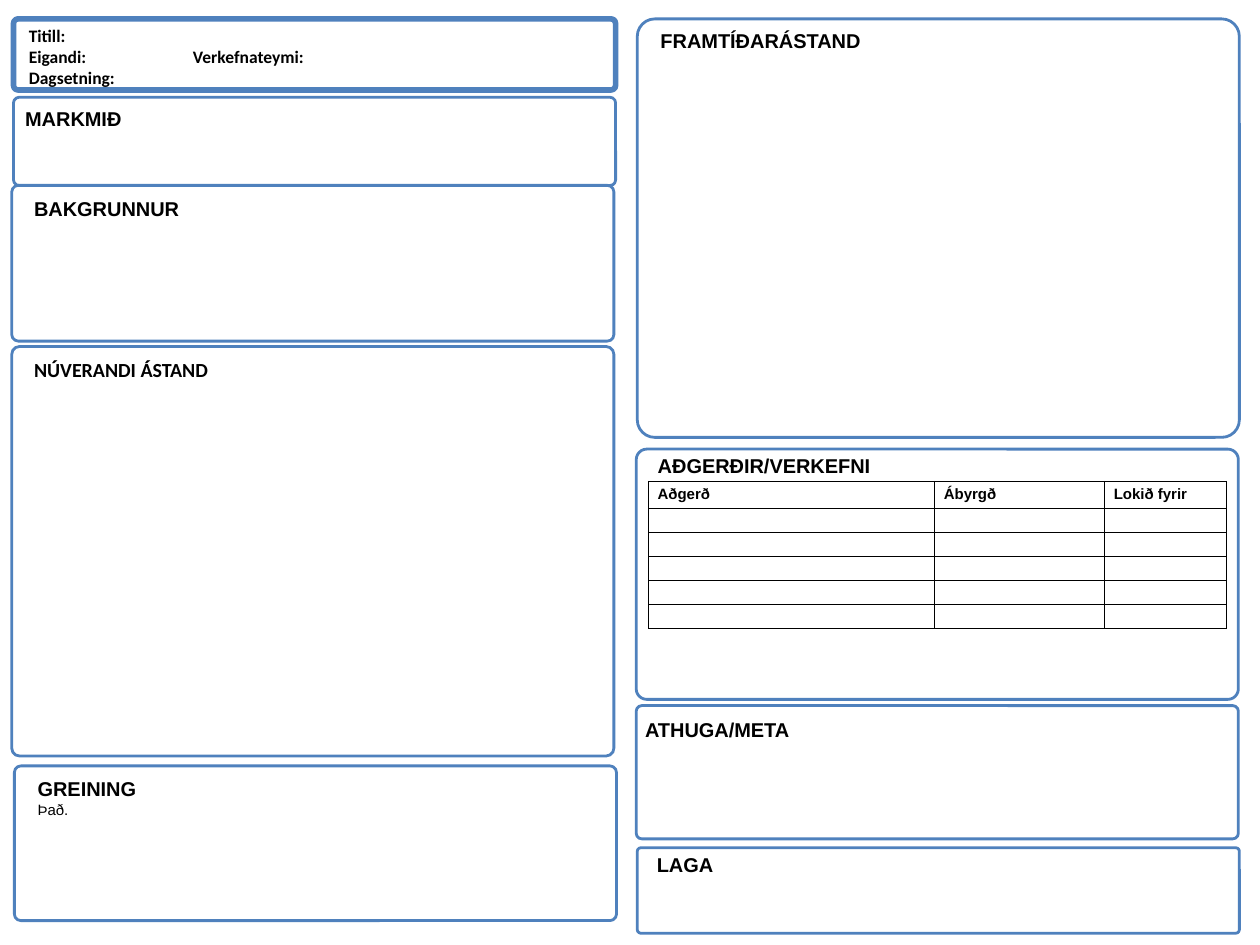
from lxml import etree
from pptx import Presentation
from pptx.dml.color import RGBColor
from pptx.enum.shapes import MSO_SHAPE
from pptx.enum.text import MSO_ANCHOR, MSO_AUTO_SIZE, PP_ALIGN
from pptx.oxml.ns import qn
from pptx.util import Pt

ROUNDED = MSO_SHAPE.ROUNDED_RECTANGLE
TOP = MSO_ANCHOR.TOP
LEFT = PP_ALIGN.LEFT
NO_AUTOFIT = MSO_AUTO_SIZE.NONE
BLUE = RGBColor(0x4F, 0x81, 0xBD)
BLACK = RGBColor(0, 0, 0)

PANEL_WIDTH = 481.7
HEADER_FRAME = (10.8, 15.1, 56.9, 0.064, 4.5)
HEADER_BOX = (13, 15.1, 477.4, 61.2)
HEADER_LINES = ["Titill:", "Eigandi:\tVerkefnateymi:", "Dagsetning:"]
TEAM_TAB = 131.3

# heading, detail, font, panel (left, top, height, rounding), label (left, top, width, height)
PANELS = [
    ("MARKMIÐ", "", "Arial", (10.8, 77.8, 70.6, 0.064), (13, 81.4, 466.6, 38.9)),
    ("BAKGRUNNUR", "", "Arial", (9.4, 148.3, 124.6, 0.042), (20.2, 154.1, 453.6, 40.3)),
    ("NÚVERANDI ÁSTAND", "", "Calibri", (9.4, 277.2, 327.6, 0.019), (20.2, 282.2, 470.9, 277.2)),
    ("GREINING", "Það.", "Arial", (11.5, 612.7, 123.8, 0.042), (23, 617.8, 459.4, 41)),
    ("FRAMTÍÐARÁSTAND", "", "Arial", (509.8, 15.1, 334.8, 0.042), (521.3, 19.4, 459.4, 28.8)),
    ("AÐGERÐIR/VERKEFNI", "", "Arial", (509, 359.3, 200.2, 0.042), (519.1, 359.3, 186.5, 71.3)),
    ("ATHUGA/META", "", "Arial", (509, 564.5, 106.6, 0.042), (509, 570.2, 453.6, 47.5)),
    ("LAGA", "", "Arial", (509.8, 678.2, 68.4, 0.042), (518.4, 678.2, 60.5, 60.5)),
]

TABLE_LEFT, TABLE_TOP = 518.9, 385.2
TABLE_HEADINGS = ["Aðgerð", "Ábyrgð", "Lokið fyrir"]
COLUMN_WIDTHS = [229, 136, 97.2]
ROW_HEIGHTS = [21.6] + [19.2] * 5


def add_span(para, text, size, font, bold=True):
    span = para.add_run()
    span.text = text
    span.font.size = Pt(size)
    span.font.name = font
    span.font.bold = bold
    span.font.color.rgb = BLACK


def add_frame(page, left, top, height, rounding, line_width=2.25):
    frame = page.shapes.add_shape(ROUNDED, Pt(left), Pt(top), Pt(PANEL_WIDTH), Pt(height))
    frame.adjustments[0] = rounding
    frame.shadow.inherit = False
    frame.fill.background()
    frame.line.color.rgb = BLUE
    frame.line.width = Pt(line_width)


def add_header(page):
    add_frame(page, *HEADER_FRAME)
    title = page.shapes.title
    title.left, title.top, title.width, title.height = map(Pt, HEADER_BOX)
    text = title.text_frame
    text.auto_size = NO_AUTOFIT
    text.word_wrap = True
    text.vertical_anchor = TOP
    text.margin_left = text.margin_right = Pt(10)
    text.margin_top = text.margin_bottom = Pt(5)
    for index, line in enumerate(HEADER_LINES):
        para = text.add_paragraph() if index else text.paragraphs[0]
        para.alignment = LEFT
        if "\t" in line:
            tabs = etree.SubElement(para._p.get_or_add_pPr(), qn("a:tabLst"))
            etree.SubElement(tabs, qn("a:tab"), pos=str(Pt(TEAM_TAB)), algn="l")
        add_span(para, line, 14, "Calibri")


def add_panel(page, heading, detail, font, frame, label):
    add_frame(page, *frame)
    text = page.shapes.add_textbox(*map(Pt, label)).text_frame
    text.word_wrap = True
    add_span(text.paragraphs[0], heading, 16, font)
    if detail:
        add_span(text.add_paragraph(), detail, 12, font, bold=False)


def outline_cell(cell):
    properties = cell._tc.get_or_add_tcPr()
    for side in ("lnL", "lnR", "lnT", "lnB"):
        border = etree.SubElement(properties, qn(f"a:{side}"), w=str(Pt(1)))
        fill = etree.SubElement(border, qn("a:solidFill"))
        etree.SubElement(fill, qn("a:srgbClr"), val=str(BLACK))
    cell.fill.background()


def add_actions(page):
    table = page.shapes.add_table(
        len(ROW_HEIGHTS), len(COLUMN_WIDTHS), Pt(TABLE_LEFT), Pt(TABLE_TOP),
        Pt(sum(COLUMN_WIDTHS)), Pt(sum(ROW_HEIGHTS))).table
    table.first_row = table.horz_banding = False
    for column, width in zip(table.columns, COLUMN_WIDTHS):
        column.width = Pt(width)
    for row_number, (row, height) in enumerate(zip(table.rows, ROW_HEIGHTS)):
        row.height = Pt(height)
        for cell, heading in zip(row.cells, TABLE_HEADINGS):
            outline_cell(cell)
            para = cell.text_frame.paragraphs[0]
            if row_number == 0:
                add_span(para, heading, 12, "Arial")
            else:
                etree.SubElement(para._p, qn("a:endParaRPr"), sz="1000")


def main():
    deck = Presentation()
    deck.slide_width, deck.slide_height = Pt(1008), Pt(756)
    page = deck.slides.add_slide(deck.slide_layouts[5])
    add_header(page)
    for panel in PANELS:
        add_panel(page, *panel)
    add_actions(page)
    deck.save("out.pptx")


if __name__ == "__main__":
    main()
